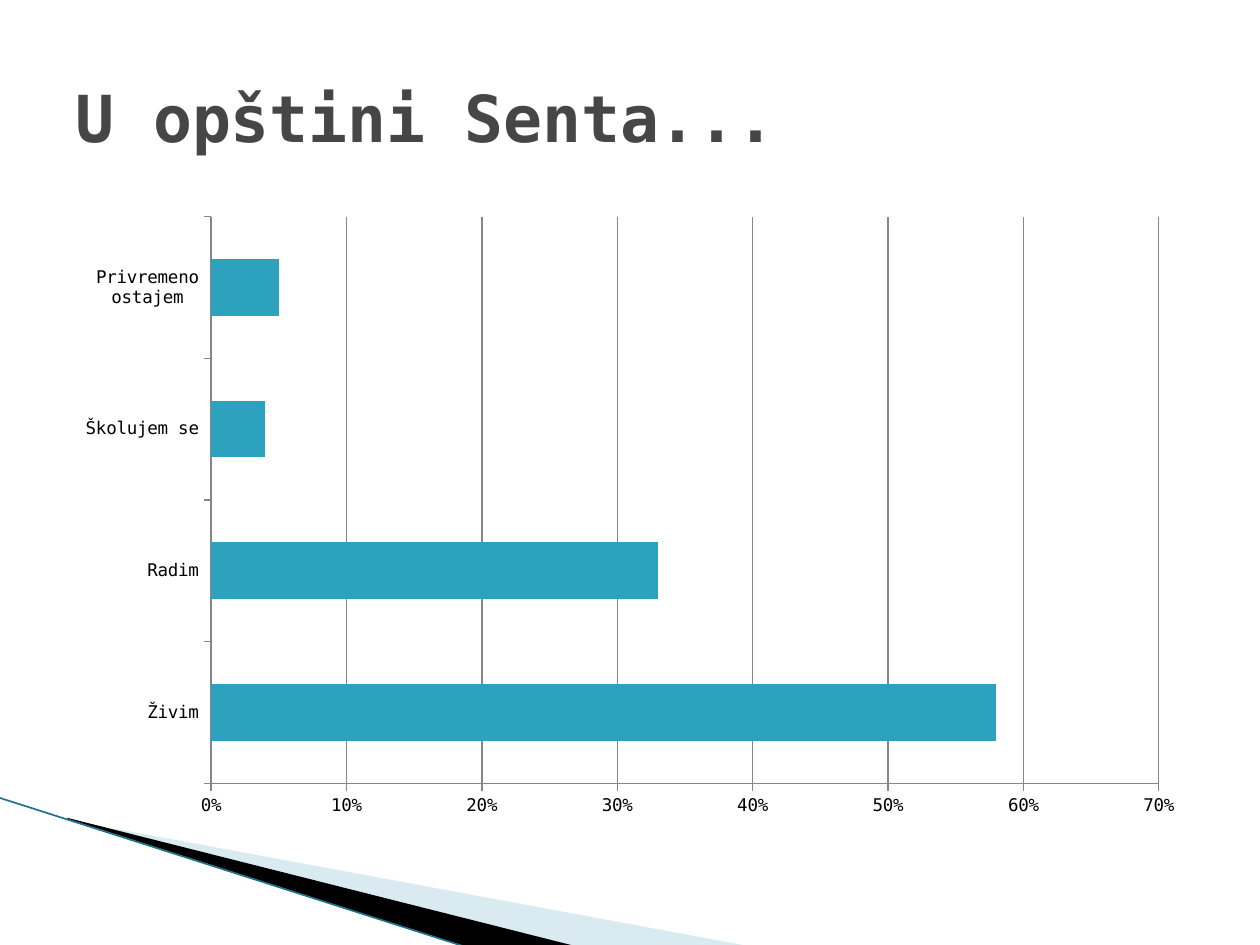
from lxml import etree
from pptx import Presentation
from pptx.chart.data import CategoryChartData
from pptx.dml.color import RGBColor
from pptx.enum.chart import XL_CHART_TYPE, XL_TICK_MARK
from pptx.enum.shapes import MSO_CONNECTOR
from pptx.enum.text import MSO_ANCHOR
from pptx.oxml.ns import qn
from pptx.util import Inches, Pt

BAR_CLUSTERED = XL_CHART_TYPE.BAR_CLUSTERED
OUTSIDE = XL_TICK_MARK.OUTSIDE
STRAIGHT = MSO_CONNECTOR.STRAIGHT
MIDDLE = MSO_ANCHOR.MIDDLE
FONT = "DejaVu Sans Mono"
AXIS_GREY = "868686"


def color(hex_code):
    """Turn a hex string into a colour."""
    return RGBColor.from_string(hex_code)


def style_font(font, size, hex_code, bold=False):
    """Set the typeface, size, colour and weight of a font."""
    font.name = FONT
    font.size = Pt(size)
    font.bold = bold
    font.color.rgb = color(hex_code)


def style_line(line, hex_code, width):
    """Set the colour and width of a line."""
    line.color.rgb = color(hex_code)
    line.width = Pt(width)


def add_wedge(page, points, hex_code, opacity=100):
    """Draw a filled polygon through points given in inches."""
    start, *others = [(Inches(x), Inches(y)) for x, y in points]
    builder = page.shapes.build_freeform(*start)
    builder.add_line_segments(others, close=True)
    wedge = builder.convert_to_shape()
    wedge.shadow.inherit = False
    wedge.fill.solid()
    wedge.fill.fore_color.rgb = color(hex_code)
    wedge.line.fill.background()
    if opacity < 100:
        fill_color = wedge.fill._xPr.find(qn("a:solidFill"))[0]
        etree.SubElement(fill_color, qn("a:alpha")).set("val", str(opacity * 1000))


def add_edge(page, start, end, hex_code, width):
    """Draw a straight line between two points in inches."""
    edge = page.shapes.add_connector(STRAIGHT, *map(Inches, start + end))
    style_line(edge.line, hex_code, width)
    etree.SubElement(edge._element.spPr, qn("a:effectLst"))


def add_title(page, text):
    """Add the slide heading."""
    box = page.shapes.add_textbox(Inches(0.5), Inches(0.3), Inches(9), Inches(1.25))
    frame = box.text_frame
    frame.word_wrap = True
    frame.vertical_anchor = MIDDLE
    frame.text = text
    style_font(frame.paragraphs[0].runs[0].font, 37, "464646", bold=True)


def add_bar_chart(page, shares):
    """Add the horizontal bar chart of shares by category."""
    data = CategoryChartData(number_format="0%")
    data.categories = list(shares)
    data.add_series("Series 1", list(shares.values()))
    chart = page.shapes.add_chart(
        BAR_CLUSTERED, Inches(0.5), Inches(1.62), Inches(9), Inches(4.95), data
    ).chart
    chart.has_legend = False
    chart.has_title = False
    style_font(chart.font, 10, "000000")

    plot = chart.plots[0]
    plot.gap_width = 150
    plot.vary_by_categories = False
    bars = plot.series[0].format.fill
    bars.solid()
    bars.fore_color.rgb = color("2DA2BF")

    for axis in (chart.category_axis, chart.value_axis):
        axis.major_tick_mark = OUTSIDE
        style_line(axis.format.line, AXIS_GREY, 0.75)
    values = chart.value_axis
    values.minimum_scale = 0
    values.maximum_scale = 0.7
    values.major_unit = 0.1
    values.has_major_gridlines = True
    style_line(values.major_gridlines.format.line, AXIS_GREY, 0.75)
    values.tick_labels.number_format = "0%"
    values.tick_labels.number_format_is_linked = False


def main():
    """Build and save the slide."""
    deck = Presentation()
    deck.slide_width = Inches(10)
    deck.slide_height = Inches(7.5)
    page = deck.slides.add_slide(deck.slide_layouts[6])
    add_wedge(page, [(0.55, 6.51), (5.95, 7.51), (4.56, 7.51), (0.55, 6.5)], "A0CBDC", 40)
    add_wedge(page, [(0.53, 6.49), (4.57, 7.51), (3.72, 7.52), (0.54, 6.5)], "000000")
    add_edge(page, (-0.01, 6.33), (3.71, 7.52), "1B7587", 0.95)
    add_title(page, "U opštini Senta...")
    add_bar_chart(
        page,
        {"Živim": 0.58, "Radim": 0.33, "Školujem se": 0.04, "Privremeno ostajem": 0.05},
    )
    deck.save("out.pptx")


if __name__ == "__main__":
    main()
